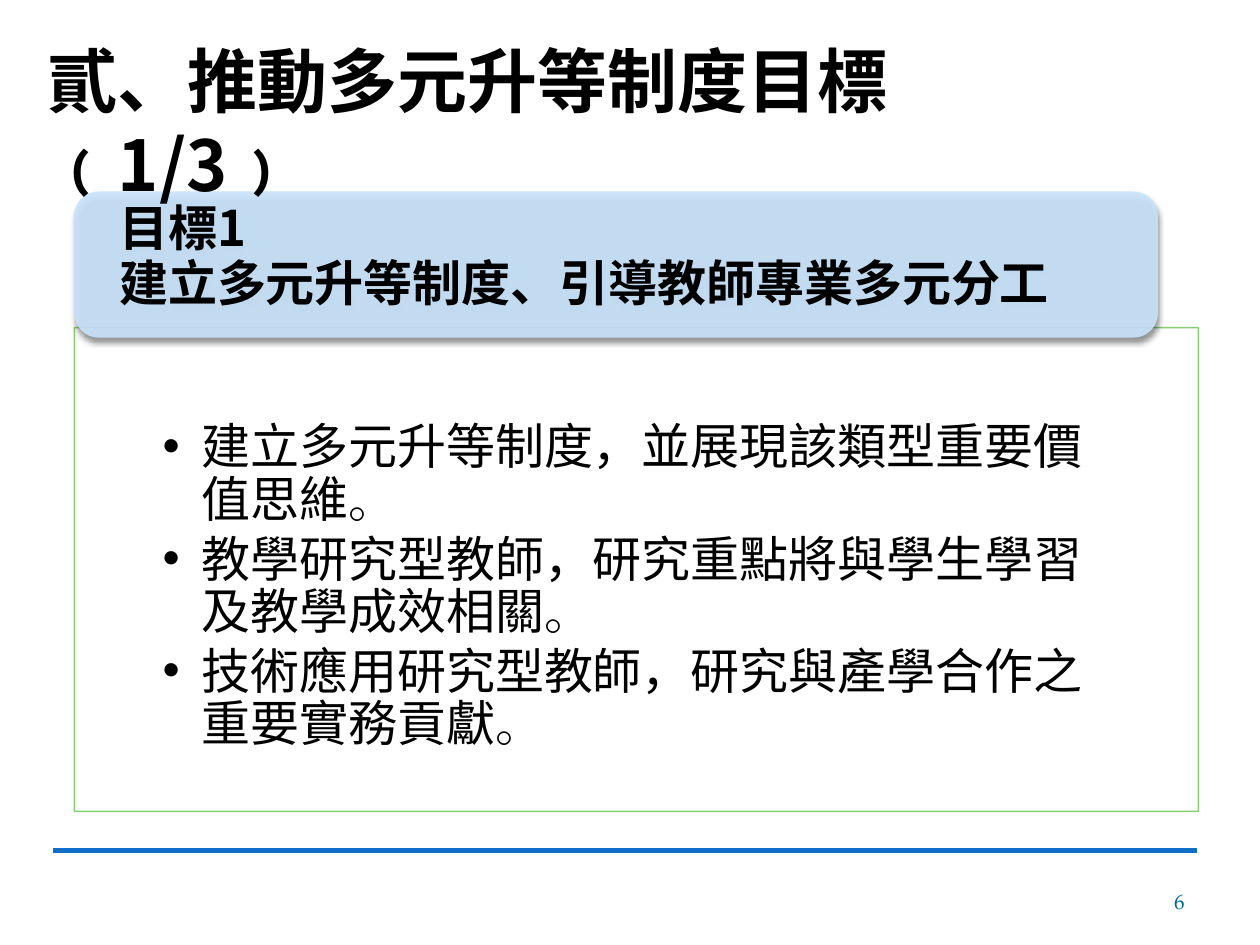
from lxml.etree import SubElement
from pptx import Presentation
from pptx.dml.color import RGBColor
from pptx.enum.shapes import MSO_CONNECTOR, MSO_SHAPE
from pptx.enum.text import MSO_ANCHOR, MSO_AUTO_SIZE, PP_ALIGN
from pptx.oxml import parse_xml
from pptx.oxml.ns import nsdecls, qn
from pptx.util import Inches, Pt

TITLE = "貳、推動多元升等制度目標﹙1/3﹚"
GOAL = ["目標1", "建立多元升等制度、引導教師專業多元分工"]
POINTS = [
    "建立多元升等制度，並展現該類型重要價值思維",
    "教學研究型教師，研究重點將與學生學習及教學成效相關",
    "技術應用研究型教師，研究與產學合作之重要實務貢獻",
]
FULL_STOP = "。"
PAGE = "6"

THEME = {
    "cjk": "Noto Sans CJK SC", "latin": "TeX Gyre Pagella",
    "ink": "000000", "page": "006699", "rule": "0F6FC6",
    "panel": "FFFFFF", "frame": "7CCA62", "band": "C8E3FB",
    "title_pt": 40, "text_pt": 28, "page_pt": 12,
}
LEFT, RIGHT = 0.59, 9.5


def place(sp, left, top, width, height):
    sp.left, sp.top, sp.width, sp.height = map(Inches, (left, top, width, height))


def set_frame(tf, insets, anchor=MSO_ANCHOR.TOP):
    tf.word_wrap, tf.auto_size, tf.vertical_anchor = True, MSO_AUTO_SIZE.NONE, anchor
    for side, inset in zip(("left", "top", "right", "bottom"), insets):
        setattr(tf, f"margin_{side}", Inches(inset))


def add_run(p, text, size, font="cjk", color="ink", bold=False):
    r = p.add_run()
    r.text = text
    for name, value in dict(size=Pt(size), bold=bold, name=THEME[font]).items():
        setattr(r.font, name, value)
    r.font.color.rgb = RGBColor.from_string(THEME[color])
    SubElement(r.font._element, qn("a:ea"), typeface=THEME[font])


def add_paragraph(tf, index, **formats):
    p = tf.paragraphs[0] if index == 0 else tf.add_paragraph()
    for name, value in dict(space_before=Pt(0), alignment=PP_ALIGN.LEFT, **formats).items():
        setattr(p, name, value)
    return p


def set_fill(fill, color, opacity):
    fill.solid()
    fill.fore_color.rgb = RGBColor.from_string(THEME[color])
    rgb = fill._xPr.find(qn("a:solidFill"))[0]
    SubElement(rgb, qn("a:alpha"), val=str(opacity * 1000))


def add_bullet(p, indent):
    pPr = p._p.get_or_add_pPr()
    pPr.set("marL", str(Inches(indent)))
    pPr.set("indent", str(-Inches(indent)))
    SubElement(pPr, qn("a:buFont"), typeface="Arial")
    SubElement(pPr, qn("a:buChar"), char="•")


prs = Presentation()
prs.slide_width, prs.slide_height = Inches(10), Inches(7.5)
s = prs.slides.add_slide(prs.slide_layouts[1])
title, body = s.placeholders

# Bulleted panel
place(body, LEFT, 2.6, 8.92, 3.84)
set_fill(body.fill, "panel", 90)
set_fill(body.line.fill, "frame", 90)
body.line.width = Pt(0.79)
set_frame(body.text_frame, (0.7, 0.75, 0.7, 0.22))
for i, point in enumerate(POINTS):
    p = add_paragraph(body.text_frame, i, line_spacing=Pt(30), space_after=Pt(4.2))
    add_bullet(p, 0.31)
    add_run(p, point, THEME["text_pt"])
    add_run(p, FULL_STOP, THEME["text_pt"], "latin")

# Goal band over the panel's top edge
band = s.shapes.add_shape(MSO_SHAPE.ROUNDED_RECTANGLE, 0, 0, 0, 0)
place(band, LEFT, 1.52, 8.6, 1.16)
set_fill(band.fill, "band", 90)
band.line.fill.background()
band._element.spPr.append(parse_xml(
    f'<a:effectLst {nsdecls("a")}><a:outerShdw blurRad="{Pt(3)}" dist="{Pt(2.4)}" '
    'dir="5400000" rotWithShape="0"><a:srgbClr val="000000"><a:alpha val="45000"/>'
    '</a:srgbClr></a:outerShdw></a:effectLst>'))
set_frame(band.text_frame, (0.3, 0, 0.3, 0), MSO_ANCHOR.MIDDLE)
for i, line in enumerate(GOAL):
    p = add_paragraph(band.text_frame, i, line_spacing=Pt(22), space_after=Pt(9.8))
    add_run(p, line, THEME["text_pt"], bold=True)

# Title, in front of the band it touches
place(title, 0.28, 0.21, 8.9, 0.77)
set_frame(title.text_frame, (0.1, 0.09, 0.6, 0.05))
p = add_paragraph(title.text_frame, 0, line_spacing=Pt(48))
add_run(p, TITLE, THEME["title_pt"], bold=True)
s.shapes._spTree.append(title._element)

# Footer rule and page number
rule = s.shapes.add_connector(MSO_CONNECTOR.STRAIGHT, Inches(0.42), Inches(6.75),
                              Inches(RIGHT), Inches(6.75))
rule.line.color.rgb = RGBColor.from_string(THEME["rule"])
rule.line.width = Pt(3)
SubElement(rule._element.spPr, qn("a:effectLst"))

page = s.shapes.add_textbox(0, 0, 0, 0)
place(page, RIGHT - 2.33, 6.95, 2.33, 0.4)
set_frame(page.text_frame, (0.1, 0.05, 0.1, 0.05), MSO_ANCHOR.MIDDLE)
p = add_paragraph(page.text_frame, 0)
p.alignment = PP_ALIGN.RIGHT
add_run(p, PAGE, THEME["page_pt"], "latin", "page")

prs.save("out.pptx")
